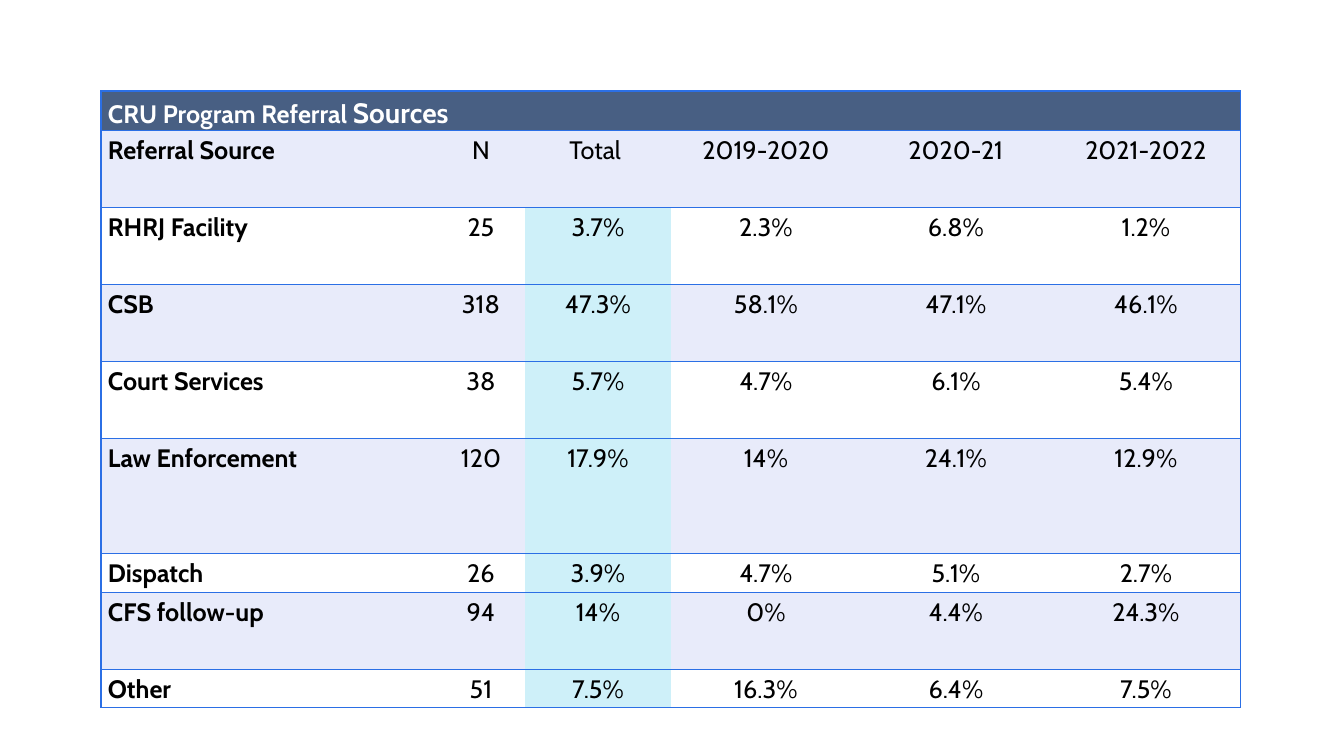
import lxml.etree
import pptx
import pptx.dml.color
import pptx.enum.text
import pptx.oxml.ns
import pptx.util

EMU_PER_PX = 914400 / 100.8
NO_GRID_STYLE = "{2D5ABB26-0587-4C30-8999-92F81FD0307C}"
COLORS = {
    "title": "485F83",
    "band": "E8EBFA",
    "plain": "FFFFFF",
    "total": "CEF0F9",
    "rule": "2B6FE5",
    "text": "000000",
    "title_text": "FFFFFF",
}
TITLE_RUNS = [("CRU Program Referral ", 18), ("Sources", 20)]
COLUMN_WIDTHS = [336, 88, 146, 190, 190, 190]
TITLE_LINES = 1
TOTAL_COLUMN = 2
# Height in text lines, then the cell texts
REFERRALS = [
    (2, ["Referral Source ", "N", "Total ", "2019-2020", "2020-21", "2021-2022"]),
    (2, ["RHRJ Facility", "25", "3.7%", "2.3%", "6.8%", "1.2%"]),
    (2, ["CSB", "318", "47.3%", "58.1%", "47.1%", "46.1%"]),
    (2, ["Court Services", "38", "5.7%", "4.7%", "6.1%", "5.4%"]),
    (3, ["Law Enforcement", "120", "17.9%", "14%", "24.1%", "12.9%"]),
    (1, ["Dispatch", "26", "3.9%", "4.7%", "5.1%", "2.7%"]),
    (2, ["CFS follow-up", "94", "14%", "0%", "4.4%", "24.3%"]),
    (1, ["Other", "51", "7.5%", "16.3%", "6.4%", "7.5%"]),
]


def px(length):
    return pptx.util.Emu(round(length * EMU_PER_PX))


def rgb(name):
    return pptx.dml.color.RGBColor.from_string(COLORS[name])


def draw_borders(cell, sides):
    """Rule the given sides (L, R, T, B) of a cell; lines must precede its fill."""
    properties = cell._tc.get_or_add_tcPr()
    for position, side in enumerate(sides):
        line = lxml.etree.Element(pptx.oxml.ns.qn(f"a:ln{side}"), w="12700")
        fill = lxml.etree.SubElement(line, pptx.oxml.ns.qn("a:solidFill"))
        lxml.etree.SubElement(fill, pptx.oxml.ns.qn("a:srgbClr"), val=COLORS["rule"])
        properties.insert(position, line)


def write_cell(cell, runs, fill, sides, color="text", bold=False, centered=False):
    margins = {"margin_left": px(7), "margin_right": px(7),
               "margin_top": 0, "margin_bottom": 0}
    for name, value in margins.items():
        setattr(cell, name, value)
    cell.fill.solid()
    cell.fill.fore_color.rgb = rgb(fill)
    draw_borders(cell, sides)
    paragraph = cell.text_frame.paragraphs[0]
    paragraph.line_spacing = 1.15
    align = pptx.enum.text.PP_ALIGN
    paragraph.alignment = align.CENTER if centered else align.LEFT
    for text, size in runs:
        run = paragraph.add_run()
        run.text = text
        font_format = {"name": "Cabin", "size": pptx.util.Pt(size), "bold": bold}
        for name, value in font_format.items():
            setattr(run.font, name, value)
        run.font.color.rgb = rgb(color)


def add_referral_table(slide, left, top, width, height):
    row_lines = [TITLE_LINES] + [lines for lines, _ in REFERRALS]
    frame = slide.shapes.add_table(len(row_lines), len(COLUMN_WIDTHS),
                                   px(left), px(top), px(width), px(height))
    table = frame.table
    table.first_row = table.horz_banding = False
    style = next(frame._element.iter(pptx.oxml.ns.qn("a:tableStyleId")))
    style.text = NO_GRID_STYLE
    for column, share in zip(table.columns, COLUMN_WIDTHS):
        column.width = px(width * share / sum(COLUMN_WIDTHS))
    for row, lines in zip(table.rows, row_lines):
        row.height = px(height * lines / sum(row_lines))

    last = len(COLUMN_WIDTHS) - 1
    title = table.cell(0, 0)
    title.merge(table.cell(0, last))
    write_cell(title, TITLE_RUNS, "title", "LRTB", color="title_text", bold=True)
    for row, (_, texts) in enumerate(REFERRALS, start=1):
        band = "band" if row % 2 else "plain"
        for column, text in enumerate(texts):
            fill = "total" if column == TOTAL_COLUMN and row > 1 else band
            sides = {0: "LTB", last: "RTB"}.get(column, "TB")
            write_cell(table.cell(row, column), [(text, 18)], fill, sides,
                       bold=column == 0, centered=column > 0)


def main():
    presentation = pptx.Presentation()
    presentation.slide_width = px(1344)
    presentation.slide_height = px(756)
    slide = presentation.slides.add_slide(presentation.slide_layouts[6])
    add_referral_table(slide, left=101, top=91, width=1140, height=616)
    presentation.save("out.pptx")


if __name__ == "__main__":
    main()
